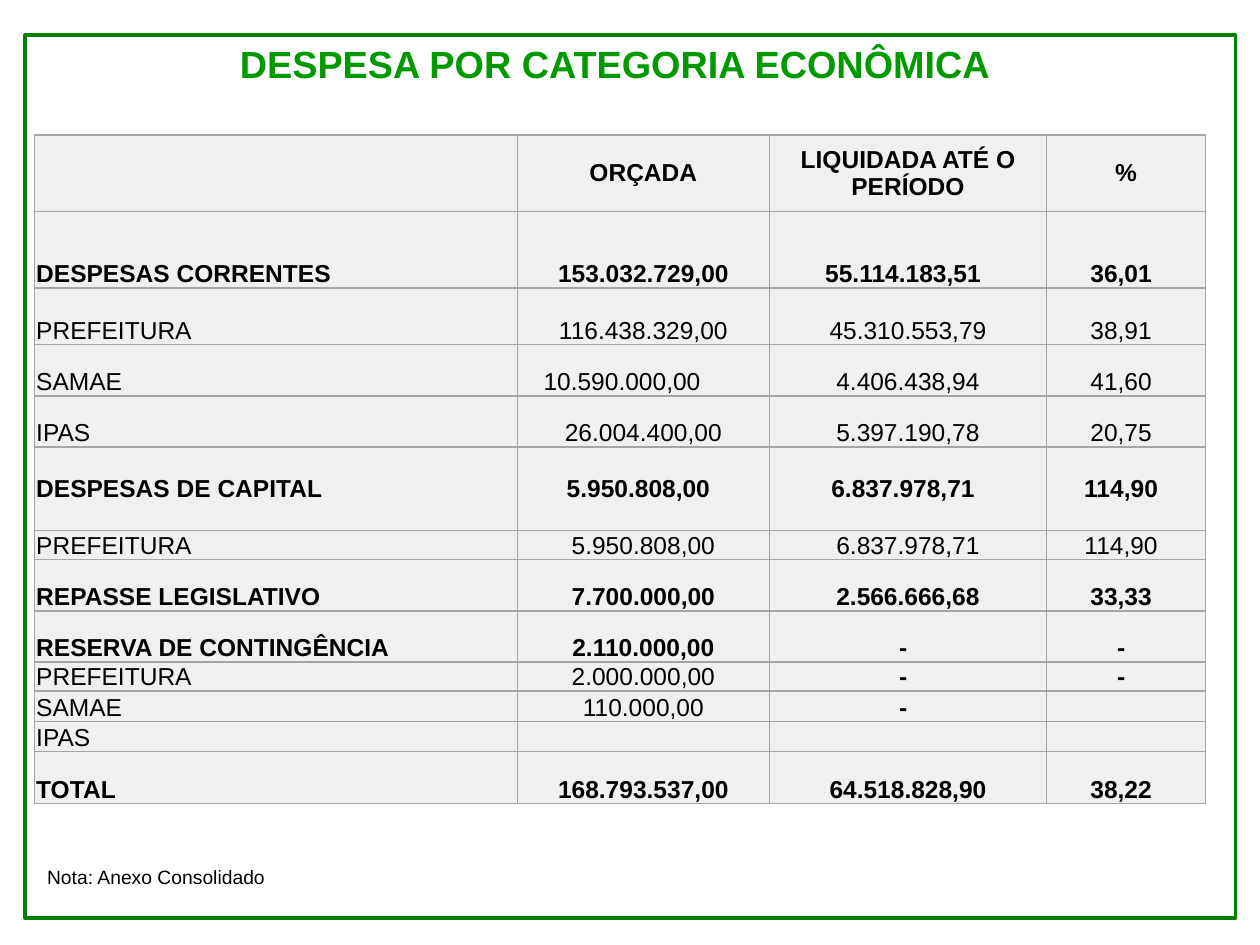
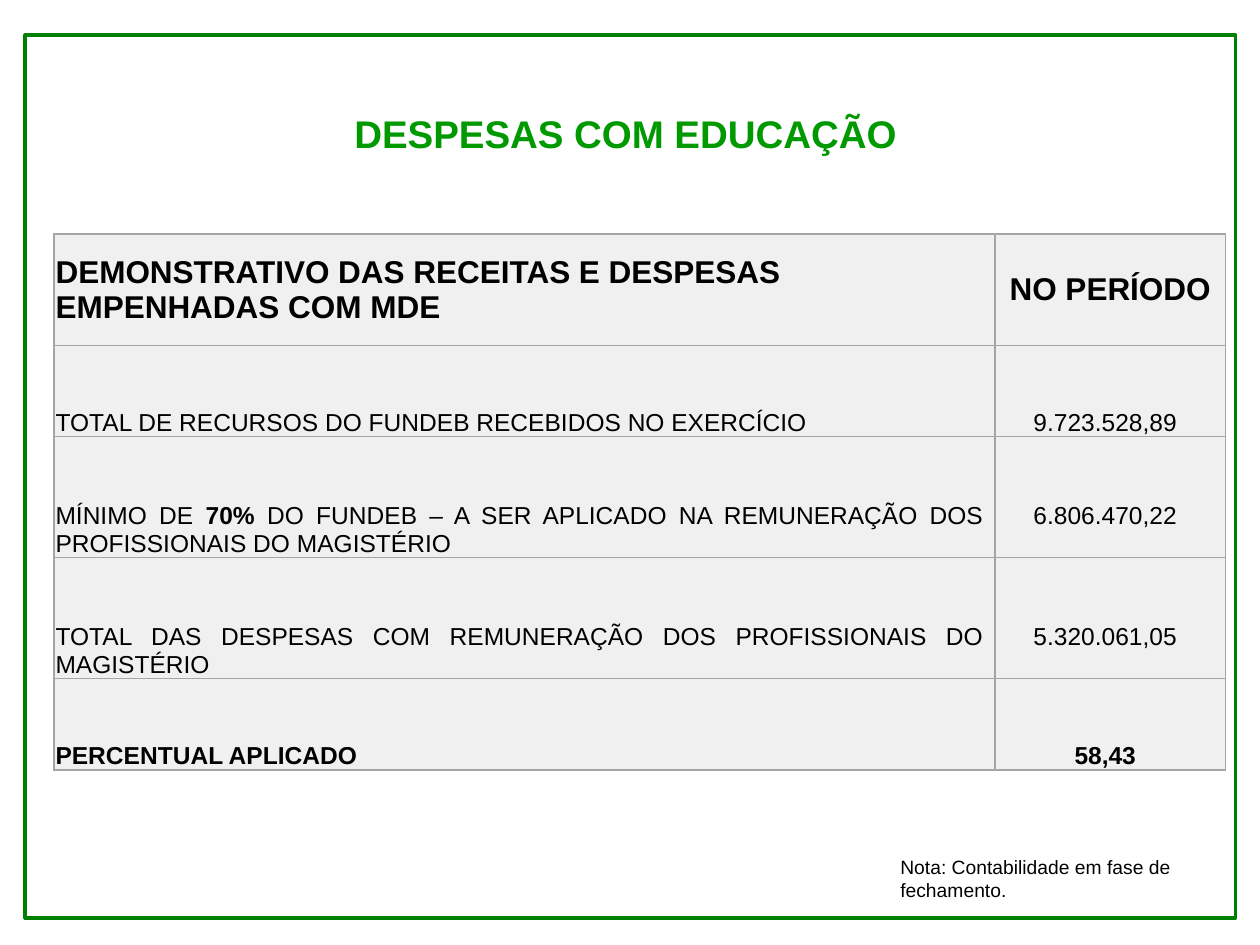
from lxml.etree import SubElement
from pptx import Presentation
from pptx.dml.color import RGBColor
from pptx.enum.shapes import MSO_SHAPE
from pptx.enum.text import MSO_ANCHOR, MSO_AUTO_SIZE, PP_ALIGN
from pptx.oxml import parse_xml
from pptx.oxml.ns import qn
from pptx.util import Cm, Pt

FRAME_GREEN = "008000"
TITLE_GREEN = "009900"
CELL_GREY = "F0F0F0"
RULE_GREY = "A5A5A5"
BLACK = "000000"
MIDDLE, BOTTOM = MSO_ANCHOR.MIDDLE, MSO_ANCHOR.BOTTOM
TIGHT, WIDE, INDENTED = 0.03, 0.23, 0.89
ONE_LINE = 0.57
HEADER = (TIGHT, TIGHT, TIGHT, TIGHT)
AMOUNTS = (WIDE, TIGHT, TIGHT, WIDE)
SHIFTED = (WIDE, TIGHT, WIDE, WIDE)
PAIR = (WIDE, WIDE)
BORDER = (
    '<a:{0} xmlns:a="http://schemas.openxmlformats.org/drawingml/2006/main" w="12700">'
    '<a:solidFill><a:srgbClr val="{1}"/></a:solidFill></a:{0}>'
)


def colour(hex_value):
    return RGBColor.from_string(hex_value)


def apply(target, values):
    for attribute, value in values.items():
        setattr(target, attribute, value)


# rows: height, anchor, size, bold, texts, right insets, bottom inset of the amounts
category_rows = [
    (1.54, MIDDLE, 14, True, ("", "ORÇADA", "LIQUIDADA ATÉ O PERÍODO", "%"), HEADER, 0),
    (1.55, BOTTOM, 14, True, ("DESPESAS CORRENTES", "153.032.729,00", "55.114.183,51", "36,01"), SHIFTED, 0),
    (1.14, BOTTOM, 14, False, ("PREFEITURA", "116.438.329,00", "45.310.553,79", "38,91"), AMOUNTS, 0),
    (1.03, BOTTOM, 14, False, ("SAMAE", "10.590.000,00", "4.406.438,94", "41,60"), (WIDE, INDENTED, TIGHT, WIDE), 0),
    (1.03, BOTTOM, 14, False, ("IPAS", "26.004.400,00", "5.397.190,78", "20,75"), AMOUNTS, 0),
    (1.69, MIDDLE, 14, True, ("DESPESAS DE CAPITAL", "5.950.808,00", "6.837.978,71", "114,90"), (WIDE,) * 4, 0),
    (0.58, BOTTOM, 14, False, ("PREFEITURA", "5.950.808,00", "6.837.978,71", "114,90"), AMOUNTS, 0),
    (1.04, BOTTOM, 14, True, ("REPASSE LEGISLATIVO", "7.700.000,00", "2.566.666,68", "33,33"), AMOUNTS, 0),
    (1.03, BOTTOM, 14, True, ("RESERVA DE CONTINGÊNCIA", "2.110.000,00", "-", "-"), SHIFTED, 0),
    (0.58, BOTTOM, 14, False, ("PREFEITURA", "2.000.000,00", "|-", "|-"), SHIFTED, 0),
    (0.58, BOTTOM, 14, False, ("SAMAE", "110.000,00", "|-", ""), SHIFTED, 0),
    (0.58, BOTTOM, 14, False, ("IPAS", "", "", ""), AMOUNTS, 0),
    (1.04, BOTTOM, 14, True, ("TOTAL", "168.793.537,00", "64.518.828,90", "38,22"), AMOUNTS, 0),
]
education_rows = [
    (2.24, MIDDLE, 18, True, ("DEMONSTRATIVO DAS RECEITAS E DESPESAS EMPENHADAS COM MDE", "NO PERÍODO"), HEADER, 0),
    (1.84, BOTTOM, 14, False, ("TOTAL DE RECURSOS DO FUNDEB RECEBIDOS NO EXERCÍCIO", "9.723.528,89"), PAIR, 0),
    (2.44, BOTTOM, 14, False, (
        "MÍNIMO DE |70% |DO FUNDEB – A SER APLICADO NA REMUNERAÇÃO DOS PROFISSIONAIS DO MAGISTÉRIO",
        "6.806.470,22"), PAIR, ONE_LINE),
    (2.44, BOTTOM, 14, False, (
        "TOTAL DAS DESPESAS COM REMUNERAÇÃO DOS PROFISSIONAIS DO MAGISTÉRIO",
        "5.320.061,05"), PAIR, ONE_LINE),
    (1.84, BOTTOM, 14, True, ("PERCENTUAL APLICADO", "58,43"), PAIR, 0),
]
pages = [
    {
        "title": "DESPESA POR CATEGORIA ECONÔMICA", "title_size": 21.6, "title_anchor": MIDDLE,
        "title_box": (1.45, 0.89, 21.9, 0.91),
        "table_at": (0.7, 2.72), "columns": (9.73, 5.08, 5.59, 3.2), "rows": category_rows,
        "note": "Nota: Anexo Consolidado", "note_box": (0.7, 17.32, 6.6, 0.74),
    },
    {
        "title": "DESPESAS COM EDUCAÇÃO", "title_size": 22, "title_anchor": BOTTOM,
        "title_box": (2.31, 1.32, 20.6, 1.96),
        "table_at": (1.09, 4.72), "columns": (18.97, 4.64), "rows": education_rows,
        "note": "Nota: Contabilidade em fase de fechamento.", "note_box": (17.9, 17.12, 6.81, 1.19),
    },
]

deck = Presentation()
apply(deck, {"slide_width": Cm(25.4), "slide_height": Cm(19.05)})

for page in pages:
    slide = deck.slides.add_slide(deck.slide_layouts[5])

    frame = slide.shapes.add_shape(MSO_SHAPE.RECTANGLE, Cm(0.51), Cm(0.71), Cm(24.4), Cm(17.8))
    frame.shadow.inherit = False
    frame.fill.background()
    frame.line.color.rgb = colour(FRAME_GREEN)
    frame.line.width = Pt(2)

    title = slide.shapes.title
    apply(title, dict(zip(("left", "top", "width", "height"), map(Cm, page["title_box"]))))
    apply(title.text_frame, {
        "text": page["title"], "word_wrap": True,
        "auto_size": MSO_AUTO_SIZE.NONE, "vertical_anchor": page["title_anchor"],
    })
    heading = title.text_frame.paragraphs[0]
    apply(heading, {"alignment": PP_ALIGN.CENTER, "line_spacing": 0.9})
    apply(heading.runs[0].font, {"name": "Arial", "size": Pt(page["title_size"]), "bold": True})
    heading.runs[0].font.color.rgb = colour(TITLE_GREEN)

    rows, columns = page["rows"], page["columns"]
    left, top = page["table_at"]
    expenses = slide.shapes.add_table(
        len(rows), len(columns), Cm(left), Cm(top),
        Cm(sum(columns)), Cm(sum(row[0] for row in rows)),
    ).table
    apply(expenses, {"first_row": False, "horz_banding": False})
    for column, width in zip(expenses.columns, columns):
        column.width = Cm(width)

    for r, (height, anchor, size, bold, texts, insets, amount_bottom) in enumerate(rows):
        expenses.rows[r].height = Cm(height)
        for c, (text, inset) in enumerate(zip(texts, insets)):
            cell = expenses.cell(r, c)
            apply(cell, {
                "vertical_anchor": anchor, "margin_left": Cm(TIGHT), "margin_top": Cm(0.01),
                "margin_right": Cm(inset), "margin_bottom": Cm(amount_bottom if c else 0),
            })
            properties = cell._tc.get_or_add_tcPr()
            for side in ("lnL", "lnR", "lnT", "lnB"):
                properties.append(parse_xml(BORDER.format(side, RULE_GREY)))
            cell.fill.solid()
            cell.fill.fore_color.rgb = colour(CELL_GREY)

            paragraph = cell.text_frame.paragraphs[0]
            label_alignment = PP_ALIGN.JUSTIFY if r else PP_ALIGN.LEFT
            paragraph.alignment = PP_ALIGN.CENTER if c else label_alignment
            for i, part in enumerate(text.split("|")):
                if part:
                    run = paragraph.add_run()
                    run.text = part
                    apply(run.font, {"name": "Arial", "size": Pt(size), "bold": bold or i % 2 == 1})
                    run.font.color.rgb = colour(BLACK)
            if not text:
                SubElement(paragraph._p, qn("a:endParaRPr"), sz=str(size * 100))

    note = slide.shapes.add_textbox(*map(Cm, page["note_box"])).text_frame
    apply(note, {"word_wrap": True, "text": page["note"]})
    remark = note.paragraphs[0].runs[0].font
    apply(remark, {"name": "Arial", "size": Pt(11)})
    remark.color.rgb = colour(BLACK)

deck.save("out.pptx")
